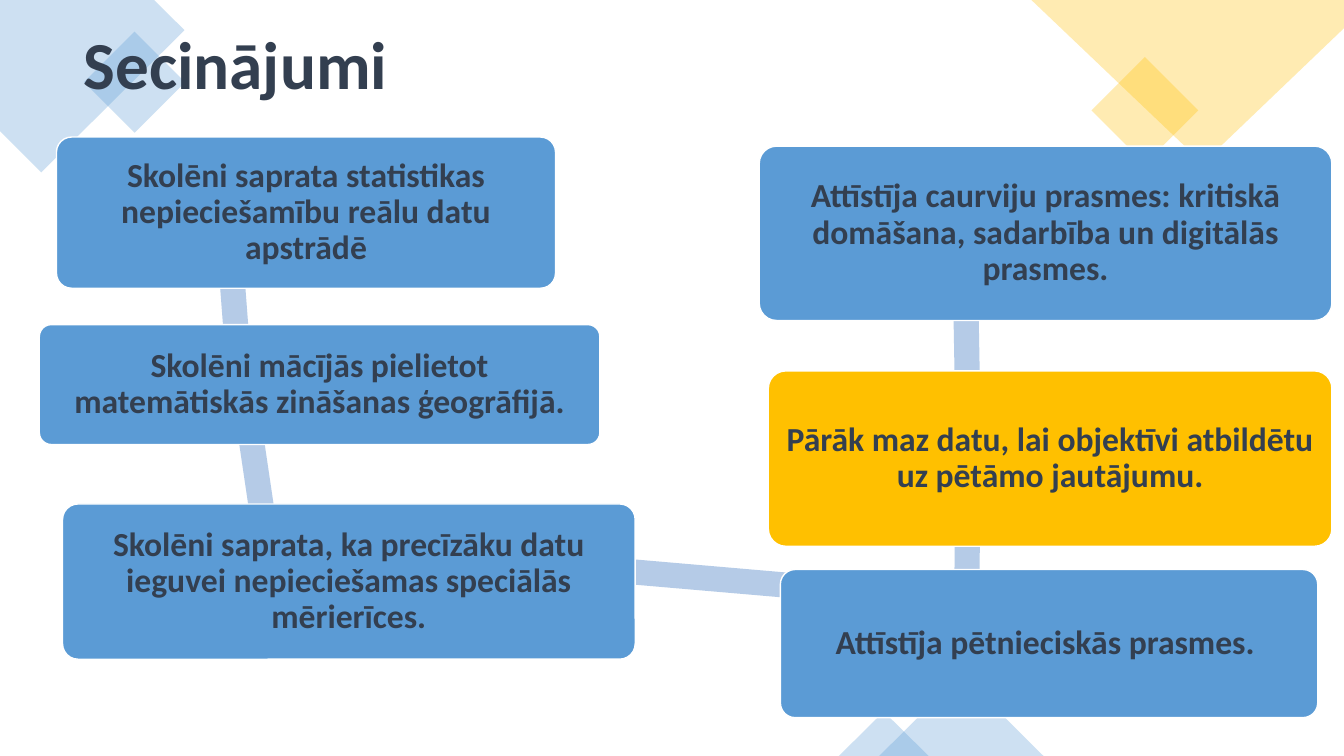
from itertools import pairwise
from math import atan2, degrees, hypot

from lxml.etree import SubElement
from pptx import Presentation
from pptx.dml.color import RGBColor
from pptx.enum.shapes import MSO_SHAPE
from pptx.enum.text import MSO_ANCHOR, MSO_AUTO_SIZE, PP_ALIGN
from pptx.oxml.ns import qn
from pptx.util import Emu, Pt

PX = 9144
SLIDE_SIZE = (1333, 750)
BLUE, YELLOW, PALE, INK, WHITE = "5B9BD5", "FFC000", "B5CBE7", "333F50", "FFFFFF"

HEADING = "Secinājumi"
HEADING_PLACE = (73, -2, 390, 138)

CONCLUSIONS = [
    ("Skolēni saprata statistikas nepieciešamību reālu datu apstrādē", (56, 136, 495, 150), BLUE),
    ("Skolēni mācījās pielietot matemātiskās zināšanas ģeogrāfijā.", (39, 322, 556, 119), BLUE),
    ("Skolēni saprata, ka precīzāku datu ieguvei nepieciešamas speciālās mērierīces.",
     (62, 500, 568, 154), BLUE),
    ("Attīstīja pētnieciskās prasmes. ", (774, 565, 533, 147), BLUE),
    ("Pārāk maz datu, lai objektīvi atbildētu uz pētāmo jautājumu.", (762, 368, 559, 174), YELLOW),
    ("Attīstīja caurviju prasmes: kritiskā domāšana, sadarbība un digitālās prasmes.",
     (753, 145, 568, 173), BLUE),
]
TRAIL = [(222, 169), (235, 340), (264, 536), (959, 596), (960, 415), (956, 190)]
TRAIL_WIDTH = 25

CORNERS = [
    ([(153, 0), (0, 0), (0, 130), (41, 171), (183, 30)], BLUE),
    ([(1333, 0), (1023, 0), (1193, 162), (1333, 28)], YELLOW),
]
ORNAMENTS = [
    (MSO_SHAPE.RECTANGLE, (98, 46, 71, 71), BLUE, 315),
    (MSO_SHAPE.RECTANGLE, (1098, 72, 75, 75), YELLOW, 315),
    (MSO_SHAPE.ISOSCELES_TRIANGLE, (872, 669, 163, 81), BLUE, 0),
    (MSO_SHAPE.ISOSCELES_TRIANGLE, (832, 706, 89, 44), BLUE, 0),
]
ORNAMENT_OPACITY = 30

FRAME_FORMAT = {"word_wrap": True, "auto_size": MSO_AUTO_SIZE.NONE,
                "vertical_anchor": MSO_ANCHOR.MIDDLE}
BOX_FRAME_FORMAT = FRAME_FORMAT | {
    f"margin_{side}": Emu(10 * PX) for side in ("left", "top", "right", "bottom")}
HEADING_FONT = {"name": "Calibri", "size": Pt(48), "bold": True}
BOX_FONT = HEADING_FONT | {"size": Pt(24)}


def colour(hex_code):
    return RGBColor.from_string(hex_code)


def apply(target, values):
    for name, value in values.items():
        setattr(target, name, value)


def scaled(lengths):
    return [Emu(round(length * PX)) for length in lengths]


def paint(shape, fill, opacity=100, outline=None):
    shape.shadow.inherit = False
    shape.fill.solid()
    shape.fill.fore_color.rgb = colour(fill)
    if opacity < 100:
        tint = shape._element.spPr.find(".//" + qn("a:srgbClr"))
        SubElement(tint, qn("a:alpha"), val=str(opacity * 1000))
    if outline:
        shape.line.color.rgb = colour(outline)
        shape.line.width = Pt(1)
    else:
        shape.line.fill.background()


def write(shape, words, frame_format, font_format, alignment):
    frame = shape.text_frame
    frame.text = words
    apply(frame, frame_format)
    paragraph = frame.paragraphs[0]
    apply(paragraph, {"alignment": alignment, "line_spacing": 0.9})
    apply(paragraph.runs[0].font, font_format)
    paragraph.runs[0].font.color.rgb = colour(INK)


def add_corner(slide, points, fill):
    start, *rest = points
    builder = slide.shapes.build_freeform(*start, scale=PX)
    builder.add_line_segments(rest, close=True)
    paint(builder.convert_to_shape(), fill, ORNAMENT_OPACITY)


def add_ornament(slide, kind, place, fill, turn):
    ornament = slide.shapes.add_shape(kind, *scaled(place))
    ornament.rotation = turn
    paint(ornament, fill, ORNAMENT_OPACITY)


def add_heading(slide):
    heading = slide.shapes.title
    apply(heading, dict(zip(("left", "top", "width", "height"), scaled(HEADING_PLACE))))
    write(heading, HEADING, FRAME_FORMAT, HEADING_FONT, PP_ALIGN.LEFT)
    slide.shapes._spTree.append(heading._element)


def add_link(slide, start, end):
    (x1, y1), (x2, y2) = start, end
    length = hypot(x2 - x1, y2 - y1)
    place = ((x1 + x2 - length) / 2, (y1 + y2 - TRAIL_WIDTH) / 2, length, TRAIL_WIDTH)
    link = slide.shapes.add_shape(MSO_SHAPE.RECTANGLE, *scaled(place))
    link.rotation = degrees(atan2(y2 - y1, x2 - x1)) % 360
    paint(link, PALE)


def add_conclusion(slide, words, place, fill):
    box = slide.shapes.add_shape(MSO_SHAPE.ROUNDED_RECTANGLE, *scaled(place))
    box.adjustments[0] = 0.1
    paint(box, fill, outline=WHITE)
    write(box, words, BOX_FRAME_FORMAT, BOX_FONT, PP_ALIGN.CENTER)


def main():
    deck = Presentation()
    deck.slide_width, deck.slide_height = scaled(SLIDE_SIZE)
    slide = deck.slides.add_slide(deck.slide_layouts[5])
    slide.background.fill.solid()
    slide.background.fill.fore_color.rgb = colour(WHITE)
    for corner in CORNERS:
        add_corner(slide, *corner)
    for ornament in ORNAMENTS:
        add_ornament(slide, *ornament)
    add_heading(slide)
    for start, end in pairwise(TRAIL):
        add_link(slide, start, end)
    for conclusion in CONCLUSIONS:
        add_conclusion(slide, *conclusion)
    deck.save("out.pptx")


if __name__ == "__main__":
    main()
